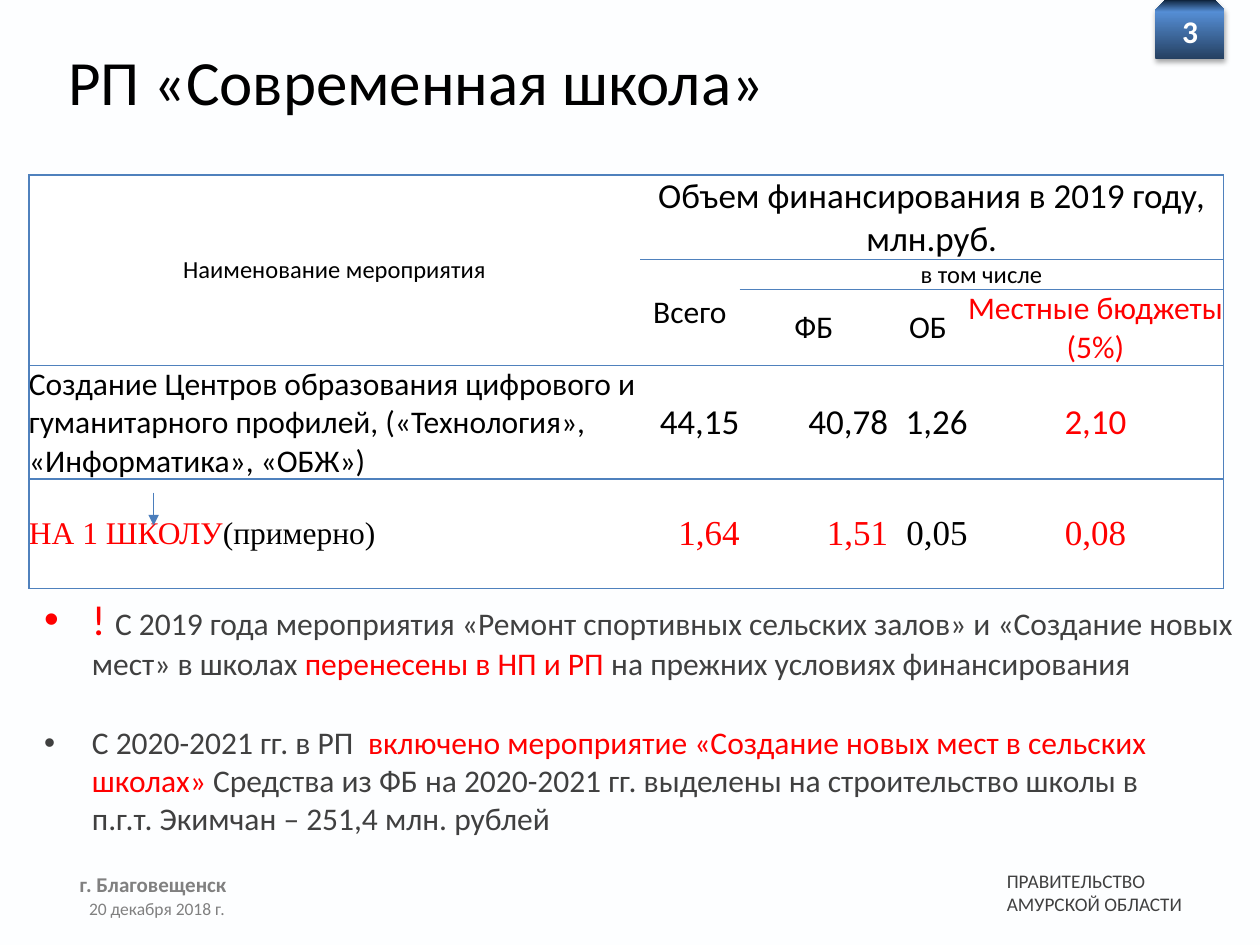
import copy

import pptx
import pptx.util
import pptx.dml.color
import pptx.enum.shapes
import pptx.enum.text
import pptx.oxml
import pptx.oxml.ns
from pptx.util import Inches

HUES = {
    "back": "FDFEFF", "white": "FFFFFF", "black": "000000", "red": "FF0000",
    "text": "404040", "gray": "808080", "edge": "4F81BD", "arrow": "4B7EBC",
    "deep": "254061", "sky": "558ED5", "night": "0F243E",
}
ALIGN = pptx.enum.text.PP_ALIGN
ANCHOR = pptx.enum.text.MSO_ANCHOR
SANS, SERIF = "Calibri", "Times New Roman"


def hue(name):
    return pptx.dml.color.RGBColor.from_string(HUES[name])


def node(body):
    """Build a DrawingML element, adding the namespace to the root tag."""
    tag, rest = body.split(" ", 1)
    return pptx.oxml.parse_xml(f"{tag} {pptx.oxml.ns.nsdecls('a')} {rest}")


class Deck:
    def __init__(self):
        self.prs = pptx.Presentation()
        self.prs.slide_width, self.prs.slide_height = Inches(10), Inches(7.5)
        self.slide = self.prs.slides.add_slide(self.prs.slide_layouts[5])
        fill = self.slide.background.fill
        fill.solid()
        fill.fore_color.rgb = hue("back")

    def fit(self, para, runs, size, align=ALIGN.LEFT, face=SANS, bold=False):
        """Runs are (text, colour) or (text, colour, size)."""
        para.alignment = align
        font = para.font
        font.name, font.size, font.bold = face, pptx.util.Pt(size), bold
        if len({run[1] for run in runs}) == 1:
            font.color.rgb = hue(runs[0][1])
        for text, color, *big in runs:
            run = para.add_run()
            run.text = text
            if len(runs) > 1:
                run.font.color.rgb = hue(color)
            if big:
                run.font.size = pptx.util.Pt(big[0])

    def title(self, box, text, size):
        shape = self.slide.shapes.title
        shape.left, shape.top, shape.width, shape.height = map(Inches, box)
        frame = shape.text_frame
        frame.vertical_anchor = ANCHOR.TOP
        self.fit(frame.paragraphs[0], [(text, "black")], size)

    def text(self, box, lines, size, align=ALIGN.LEFT, bold=False, pad=True,
             anchor=ANCHOR.TOP, bullet=False):
        frame = self.slide.shapes.add_textbox(*map(Inches, box)).text_frame
        frame.word_wrap, frame.vertical_anchor = True, anchor
        if not pad:
            frame.margin_left = frame.margin_right = 0
            frame.margin_top = frame.margin_bottom = 0
        for i, runs in enumerate(lines):
            para = frame.add_paragraph() if i else frame.paragraphs[0]
            if bullet:
                props = para._p.get_or_add_pPr()
                props.set("marL", str(Inches(0.38)))
                props.set("indent", str(Inches(-0.38)))
                props.append(node('<a:buFont typeface="Arial"/>'))
                props.append(node('<a:buChar char="•"/>'))
                para.space_after = pptx.util.Pt(6)
            self.fit(para, runs, size, align, bold=bold)

    def badge(self, box):
        kind = pptx.enum.shapes.MSO_SHAPE.SNIP_2_SAME_RECTANGLE
        shape = self.slide.shapes.add_shape(kind, *map(Inches, box))
        shape.line.fill.background()
        fill = shape.fill
        fill.gradient()
        fill.gradient_angle = 90
        props = shape._element.spPr
        first = props.find(".//" + pptx.oxml.ns.qn("a:gs"))
        first.addnext(copy.deepcopy(first))
        ramp = [(0, "deep"), (0.8, "sky"), (1, "night")]
        for stop, (place, color) in zip(fill.gradient_stops, ramp):
            stop.position = place
            stop.color.rgb = hue(color)
        props.append(node(
            f'<a:effectLst ><a:outerShdw blurRad="{pptx.util.Pt(3.1)}" '
            f'dist="{pptx.util.Pt(1.8)}" dir="5400000" rotWithShape="0">'
            f'<a:srgbClr val="{HUES["black"]}"><a:alpha val="35000"/></a:srgbClr>'
            '</a:outerShdw></a:effectLst>'))

    def arrow(self, start, end):
        kind = pptx.enum.shapes.MSO_CONNECTOR.STRAIGHT
        line = self.slide.shapes.add_connector(kind, *map(Inches, start + end))
        line.line.color.rgb = hue("arrow")
        line.line.width = pptx.util.Pt(0.75)
        props = line._element.spPr
        props.get_or_add_ln().append(node('<a:tailEnd type="triangle"/>'))
        props.append(node("<a:effectLst />"))

    def table(self, left, top, cols, rows):
        box = map(Inches, (left, top, sum(cols), sum(rows)))
        grid = self.slide.shapes.add_table(len(rows), len(cols), *box).table
        grid.first_row = grid.horz_banding = False
        # "No Style, No Grid"
        style = grid._tbl.tblPr.find(pptx.oxml.ns.qn("a:tableStyleId"))
        style.text = "{2D5ABB26-0587-4C30-8999-92F81FD0307C}"
        for col, width in zip(grid.columns, cols):
            col.width = Inches(width)
        for row, height in zip(grid.rows, rows):
            row.height = Inches(height)
        return grid

    def cell(self, grid, row, col, runs, size, align=ALIGN.CENTER, face=SANS,
             span=(1, 1)):
        cell = grid.cell(row, col)
        if span != (1, 1):
            cell.merge(grid.cell(row + span[0] - 1, col + span[1] - 1))
        side = Inches(0.02 if row == 0 else 0)
        cell.margin_left = cell.margin_right = side
        cell.margin_top = cell.margin_bottom = 0
        cell.vertical_anchor = ANCHOR.MIDDLE
        props = cell._tc.get_or_add_tcPr()
        # Rules run across; only the outer sides are closed
        edges = {"L": col == 0, "R": col + span[1] == len(grid.columns),
                 "T": True, "B": True}
        for edge in (name for name, drawn in edges.items() if drawn):
            props.append(node(
                f'<a:ln{edge} w="{pptx.util.Pt(1)}"><a:solidFill>'
                f'<a:srgbClr val="{HUES["edge"]}"/></a:solidFill></a:ln{edge}>'))
        cell.fill.solid()
        cell.fill.fore_color.rgb = hue("white")
        self.fit(cell.text_frame.paragraphs[0], runs, size, align, face)


def main():
    deck = Deck()

    # Heading and page number
    deck.title((0.44, 0.29, 8.5, 0.94), "РП «Современная школа»", 36)
    deck.badge((9.17, 0, 0.55, 0.47))
    deck.text((9.17, 0.05, 0.55, 0.43), [[("3", "white")]], 18,
              ALIGN.CENTER, bold=True)

    # Table head
    grid = deck.table(0.23, 1.39, [4.85, 0.79, 1.18, 0.63, 2.03],
                      [0.67, 0.24, 0.6, 0.9, 0.87])
    heads = [
        (0, 0, "Наименование мероприятия", "black", 14, (3, 1)),
        (0, 1, "Объем финансирования в 2019 году, млн.руб.", "black", 20, (1, 4)),
        (1, 1, "Всего", "black", 18, (2, 1)),
        (1, 2, "в том числе", "black", 14, (1, 3)),
        (2, 2, "ФБ", "black", 18, (1, 1)),
        (2, 3, "ОБ", "black", 18, (1, 1)),
        (2, 4, "Местные бюджеты (5%)", "red", 18, (1, 1)),
    ]
    for row, col, text, color, size, span in heads:
        deck.cell(grid, row, col, [(text, color)], size, span=span)

    # Table body
    rows = [
        (SANS, [("Создание Центров образования цифрового и гуманитарного "
                 "профилей, («Технология», «Информатика», «ОБЖ»)", "black")],
         [("44,15", "black"), ("40,78", "black"), ("1,26", "black"), ("2,10", "red")]),
        (SERIF, [("НА 1 ШКОЛУ", "red"), ("(примерно)", "black")],
         [("1,64", "red"), ("1,51", "red"), ("0,05", "black"), ("0,08", "red")]),
    ]
    for row, (face, name, sums) in enumerate(rows, 3):
        deck.cell(grid, row, 0, name, 18, ALIGN.LEFT, face)
        for col, run in enumerate(sums, 1):
            align = ALIGN.CENTER if col == 4 else ALIGN.RIGHT
            deck.cell(grid, row, col, [run], 20, align, face)
    deck.arrow((1.22, 3.91), (1.22, 4.17))

    # Notes under the table
    deck.text((0.35, 4.71, 9.53, 1.01), [[
        ("! ", "red", 24),
        ("С 2019 года мероприятия «Ремонт спортивных сельских залов» и "
         "«Создание новых мест» в школах ", "text"),
        ("перенесены в НП и РП ", "red"),
        ("на прежних условиях финансирования", "text"),
    ]], 18, pad=False, bullet=True)
    deck.text((0.35, 5.74, 9.06, 0.91), [[
        ("С 2020-2021 гг. в РП  ", "text"),
        ("включено мероприятие «Создание новых мест в сельских школах»", "red"),
        (" Средства из ФБ на 2020-2021 гг. выделены на строительство школы "
         "в п.г.т. Экимчан – 251,4 млн. рублей", "text"),
    ]], 18, pad=False, bullet=True)

    # Footer
    deck.text((0.35, 6.74, 1.73, 0.55), [[("г. Благовещенск", "gray")]], 12,
              ALIGN.CENTER, bold=True, anchor=ANCHOR.MIDDLE)
    deck.text((0.38, 7.08, 1.73, 0.31), [[("20 декабря 2018 г.", "gray")]], 10,
              ALIGN.CENTER)
    deck.text((7.99, 6.9, 1.89, 0.37),
              [[("ПРАВИТЕЛЬСТВО", "text")], [("АМУРСКОЙ ОБЛАСТИ", "text")]],
              11, pad=False)

    deck.prs.save("out.pptx")


if __name__ == "__main__":
    main()
